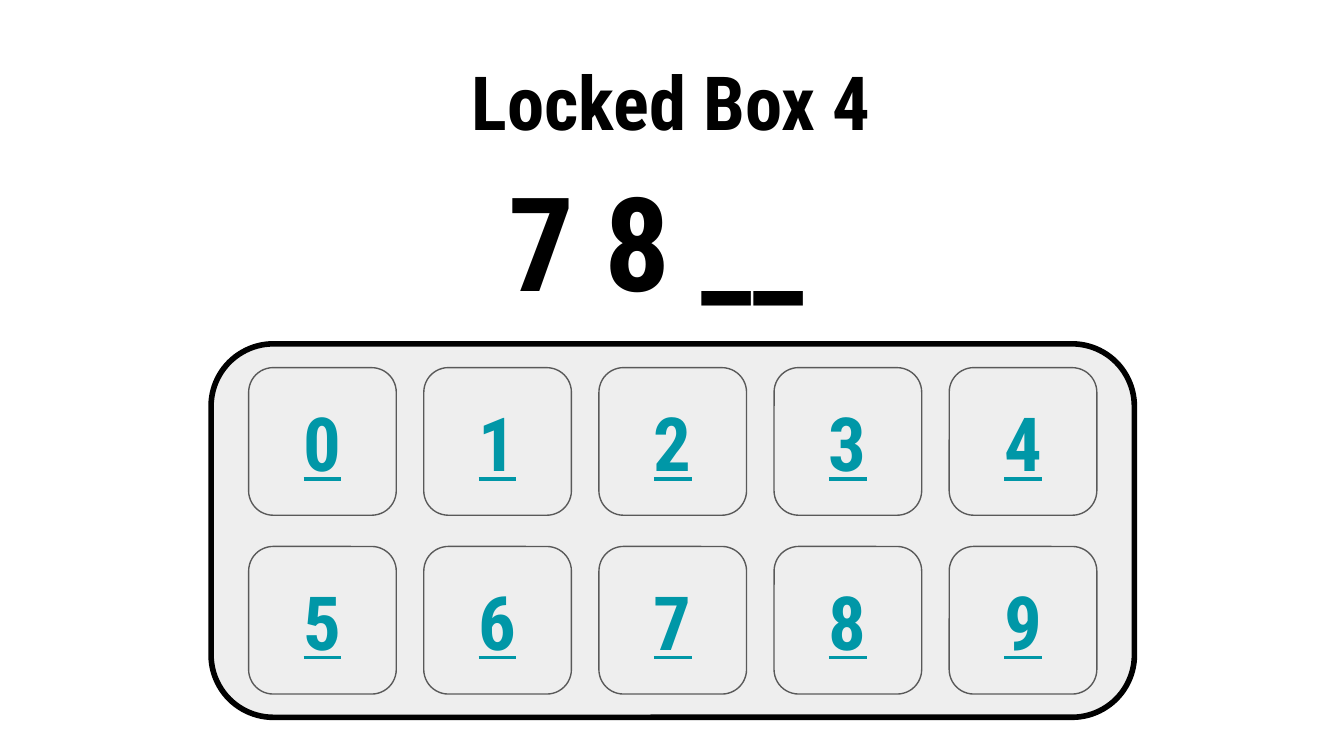
import dataclasses

import pptx
import pptx.dml.color
import pptx.enum.shapes
import pptx.enum.text
import pptx.shapes.autoshape
import pptx.shapes.shapetree
import pptx.text.text
import pptx.util
from pptx.util import Cm

FONT = "Roboto Condensed"
BLACK, TEAL, GREY, PALE = "000000", "0097A7", "595959", "EEEEEE"
COLUMNS = 5
KEY_SIZE = 2.79
KEY_LEFT, KEY_TOP = 4.7, 6.95
COLUMN_STEP, ROW_STEP = 3.31, 3.38


@dataclasses.dataclass(frozen=True)
class Box:
    """Position and size in centimetres."""
    left: float
    top: float
    width: float
    height: float

    def lengths(self) -> tuple[Cm, Cm, Cm, Cm]:
        return Cm(self.left), Cm(self.top), Cm(self.width), Cm(self.height)


@dataclasses.dataclass(frozen=True)
class Label:
    text: str
    size: float
    color: str = BLACK
    underline: bool = False


@dataclasses.dataclass(frozen=True)
class Heading:
    box: Box
    label: Label


HEADINGS = [
    Heading(Box(1.42, 2.79, 22.56, 3.51), Label("7 8 __ ", 70)),
    Heading(Box(4.34, 0.81, 16.69, 2.24), Label("Locked Box 4", 40)),
]


def rgb(color: str) -> pptx.dml.color.RGBColor:
    return pptx.dml.color.RGBColor.from_string(color)


def write_label(frame: pptx.text.text.TextFrame, label: Label) -> None:
    frame.word_wrap = True
    frame.margin_left = frame.margin_right = Cm(0.25)
    frame.margin_top = frame.margin_bottom = Cm(0.25)
    paragraph = frame.paragraphs[0]
    paragraph.alignment = pptx.enum.text.PP_ALIGN.CENTER
    run = paragraph.add_run()
    run.text = label.text
    run.font.name = FONT
    run.font.size = pptx.util.Pt(label.size)
    run.font.bold = True
    run.font.underline = label.underline
    run.font.color.rgb = rgb(label.color)


def add_rounded_box(shapes: pptx.shapes.shapetree.GroupShapes, box: Box,
                    line_color: str, line_width: float) -> pptx.shapes.autoshape.Shape:
    shape = shapes.add_shape(
        pptx.enum.shapes.MSO_SHAPE.ROUNDED_RECTANGLE, *box.lengths())
    shape.adjustments[0] = 0.167
    shape.shadow.inherit = False
    shape.fill.solid()
    shape.fill.fore_color.rgb = rgb(PALE)
    shape.line.color.rgb = rgb(line_color)
    shape.line.width = pptx.util.Pt(line_width)
    return shape


def add_key(shapes: pptx.shapes.shapetree.GroupShapes, digit: int) -> None:
    row, column = divmod(digit, COLUMNS)
    box = Box(KEY_LEFT + column * COLUMN_STEP, KEY_TOP + row * ROW_STEP,
              KEY_SIZE, KEY_SIZE)
    key = add_rounded_box(shapes, box, GREY, 0.75)
    key.text_frame.vertical_anchor = pptx.enum.text.MSO_ANCHOR.MIDDLE
    write_label(key.text_frame, Label(str(digit), 40, TEAL, underline=True))


def add_heading(shapes: pptx.shapes.shapetree.SlideShapes, heading: Heading) -> None:
    frame = shapes.add_textbox(*heading.box.lengths()).text_frame
    write_label(frame, heading.label)
    frame.auto_size = pptx.enum.text.MSO_AUTO_SIZE.SHAPE_TO_FIT_TEXT


def main() -> None:
    presentation = pptx.Presentation()
    presentation.slide_width = Cm(25.4)
    presentation.slide_height = Cm(14.29)
    slide = presentation.slides.add_slide(presentation.slide_layouts[6])

    keypad = slide.shapes.add_group_shape()
    add_rounded_box(keypad.shapes, Box(3.99, 6.5, 17.45, 7.06), BLACK, 3)
    for digit in range(2 * COLUMNS):
        add_key(keypad.shapes, digit)
    for heading in HEADINGS:
        add_heading(slide.shapes, heading)

    presentation.save("out.pptx")


if __name__ == "__main__":
    main()
